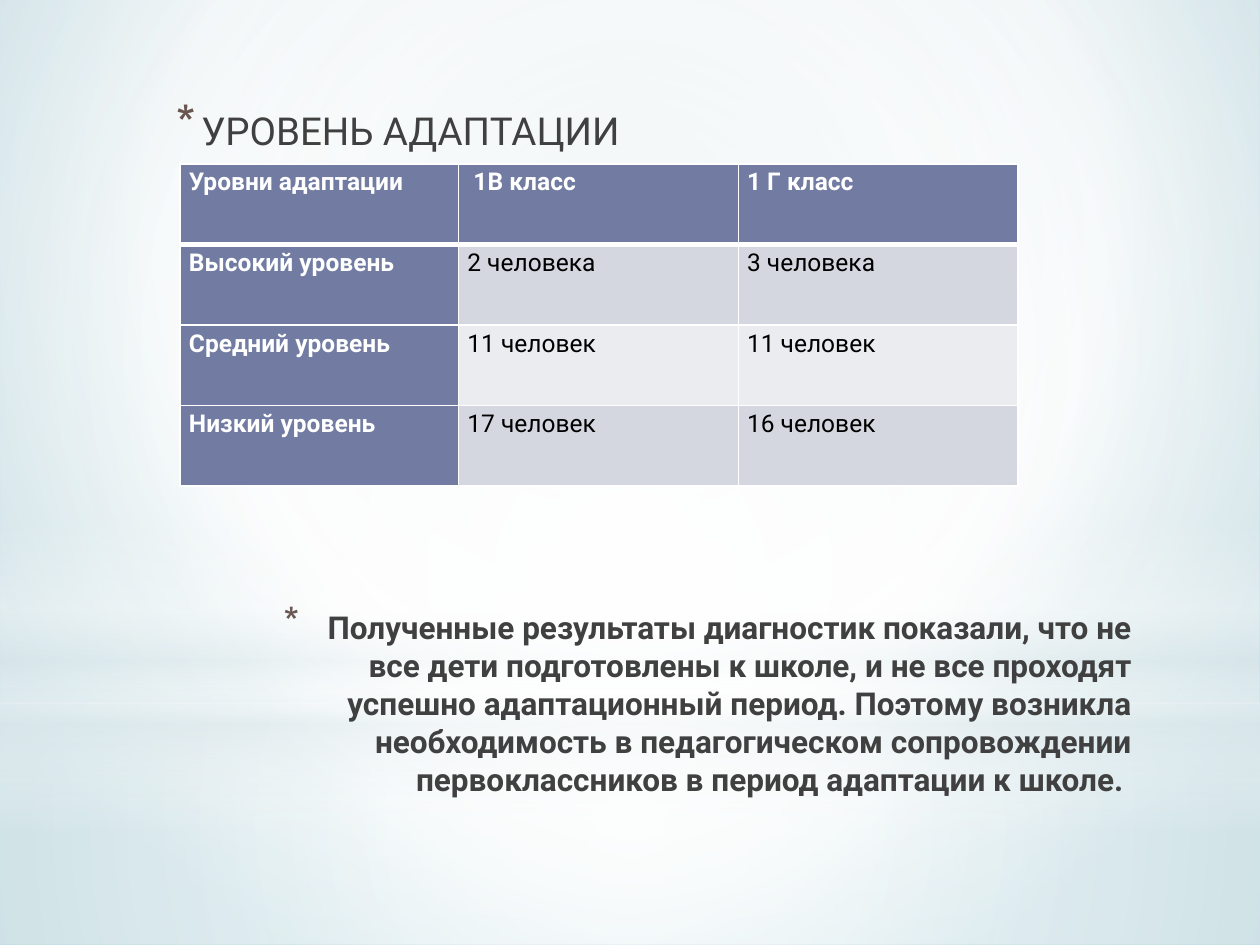
from pptx import Presentation
from pptx.dml.color import RGBColor
from pptx.enum.shapes import MSO_SHAPE
from pptx.enum.text import MSO_ANCHOR, PP_ALIGN
from pptx.oxml import parse_xml
from pptx.oxml.ns import nsdecls, qn
from pptx.util import Inches, Pt

RECTANGLE, OVAL = MSO_SHAPE.RECTANGLE, MSO_SHAPE.OVAL
TOP = MSO_ANCHOR.TOP
LEFT, RIGHT, JUSTIFY = PP_ALIGN.LEFT, PP_ALIGN.RIGHT, PP_ALIGN.JUSTIFY

WHITE = RGBColor(0xFF, 0xFF, 0xFF)
BLACK = RGBColor(0x00, 0x00, 0x00)
CHARCOAL = RGBColor(0x40, 0x40, 0x40)
BROWN = RGBColor(0x6A, 0x56, 0x50)
SLATE = RGBColor(0x72, 0x7C, 0xA3)
BAND_DARK = RGBColor(0xD5, 0xD7, 0xE0)
BAND_LIGHT = RGBColor(0xEB, 0xEC, 0xF0)
MIST = RGBColor(0xDD, 0xE9, 0xEC)
PALE_BLUE = RGBColor(0xD0, 0xE2, 0xE6)
SKY = RGBColor(0x9B, 0xC8, 0xD4)
FONT = "Roboto"
CENTRE = (50, 50, 50, 50)


def paint_gradient(owner, fill, stops, focus=None):
    """Radial gradient around focus (left, top, right, bottom %), else downwards."""
    fill.gradient()
    stop_xml = "".join(
        f'<a:gs pos="{position * 1000}"><a:srgbClr val="{color}">'
        f'<a:alpha val="{alpha * 1000}"/></a:srgbClr></a:gs>'
        for position, color, alpha in stops)
    if focus:
        sides = " ".join(f'{side}="{value * 1000}"' for side, value in zip("ltrb", focus))
        direction = f'<a:path path="circle"><a:fillToRect {sides}/></a:path>'
    else:
        direction = '<a:lin ang="5400000" scaled="0"/>'
    gradient = parse_xml(f'<a:gradFill {nsdecls("a")} rotWithShape="1">'
                         f'<a:gsLst>{stop_xml}</a:gsLst>{direction}</a:gradFill>')
    default = owner._element.find(".//" + qn("a:gradFill"))
    default.getparent().replace(default, gradient)


def write(para, text, **font_values):
    span = para.add_run()
    span.text = text
    span.font.name = FONT
    span.font.color.rgb = font_values.pop("color")
    for name, value in font_values.items():
        setattr(span.font, name, value)


deck = Presentation()
deck.slide_width, deck.slide_height = Inches(10), Inches(7.5)
page = deck.slides.add_slide(deck.slide_layouts[6])

# Background and its soft light layers
paint_gradient(page, page.background.fill,
               [(0, PALE_BLUE, 100), (60, WHITE, 100), (100, SKY, 100)], (20, 10, 20, 60))
layers = [
    (RECTANGLE, 5.58, 1.92, [(0, WHITE, 91), (37, WHITE, 76), (100, MIST, 79)], CENTRE),
    (RECTANGLE, 0, 5.58, [(0, WHITE, 89), (48, WHITE, 62), (100, MIST, 79)], CENTRE),
    (RECTANGLE, 4.12, 2.5, [(0, WHITE, 0), (29, WHITE, 30), (45, MIST, 40),
                            (55, WHITE, 26), (65, MIST, 60), (100, WHITE, 0)], None),
    (OVAL, 1.75, 5.58, [(0, WHITE, 100), (56, WHITE, 0)], CENTRE),
]
for kind, top, height, stops, focus in layers:
    layer = page.shapes.add_shape(kind, 0, Inches(top), deck.slide_width, Inches(height))
    layer.shadow.inherit = False
    layer.line.fill.background()
    paint_gradient(layer, layer.fill, stops, focus)

# Conclusion and heading, each with an asterisk bullet
conclusion = ("Полученные результаты диагностик показали, что не все дети подготовлены к школе, "
              "и не все проходят успешно адаптационный период. Поэтому возникла необходимость "
              "в педагогическом сопровождении первоклассников в период адаптации к школе. ")
texts = [
    (conclusion, (1.96, 4.78, 7.12, 1.25), 18, True, RIGHT, 0.35, -0.35, 128, 0),
    ("УРОВЕНЬ АДАПТАЦИИ", (1.25, 0.8, 7, 3.8), 22, False, LEFT, 0.25, -0.2, 130, 3),
]
for text, place, size, bold, alignment, margin, indent, bullet_size, space_after in texts:
    box = page.shapes.add_textbox(*map(Inches, place))
    box.text_frame.word_wrap = True
    box.text_frame.vertical_anchor = TOP
    para = box.text_frame.paragraphs[0]
    para.alignment = alignment
    para.space_after = Pt(space_after)
    write(para, text, size=Pt(size), bold=bold, color=CHARCOAL)
    properties = para._p.get_or_add_pPr()
    properties.set("marL", str(Inches(margin)))
    properties.set("indent", str(Inches(indent)))
    for bullet in (f'<a:buClr {nsdecls("a")}><a:srgbClr val="{BROWN}"/></a:buClr>',
                   f'<a:buSzPct {nsdecls("a")} val="{bullet_size * 1000}"/>',
                   f'<a:buChar {nsdecls("a")} char="*"/>'):
        properties.append(parse_xml(bullet))

# Table of adaptation levels
rows = [
    ("Уровни адаптации", " 1В класс", "1 Г класс"),
    ("Высокий уровень", "2 человека", "3 человека"),
    ("Средний уровень", "11 человек", "11 человек"),
    ("Низкий уровень", "17 человек", "16 человек"),
]
cell_format = {"margin_left": Inches(0.07), "margin_right": Inches(0.07),
               "margin_top": 0, "margin_bottom": 0}
para_format = {"alignment": JUSTIFY, "line_spacing": 1.15, "space_after": Pt(10)}
table = page.shapes.add_table(len(rows), 3, Inches(1.43), Inches(1.3),
                              Inches(6.65), Inches(2.56)).table
for column, width in zip(table.columns, (2.21, 2.22, 2.22)):
    column.width = Inches(width)
for row_index, row in enumerate(rows):
    table.rows[row_index].height = Inches(0.64)
    for column_index, text in enumerate(row):
        cell = table.cell(row_index, column_index)
        for name, value in cell_format.items():
            setattr(cell, name, value)

        # White borders, thicker below the header row
        thick_side = {0: "B", 1: "T"}.get(row_index)
        for side in "LRTB":
            width = Pt(3 if side == thick_side else 1)
            cell._tc.get_or_add_tcPr().append(parse_xml(
                f'<a:ln{side} {nsdecls("a")} w="{width}"><a:solidFill>'
                f'<a:srgbClr val="{WHITE}"/></a:solidFill></a:ln{side}>'))

        is_label = row_index == 0 or column_index == 0
        band = BAND_DARK if row_index % 2 else BAND_LIGHT
        cell.fill.solid()
        cell.fill.fore_color.rgb = SLATE if is_label else band
        para = cell.text_frame.paragraphs[0]
        for name, value in para_format.items():
            setattr(para, name, value)
        write(para, text, size=Pt(14), bold=is_label, color=WHITE if is_label else BLACK)

deck.save("out.pptx")
